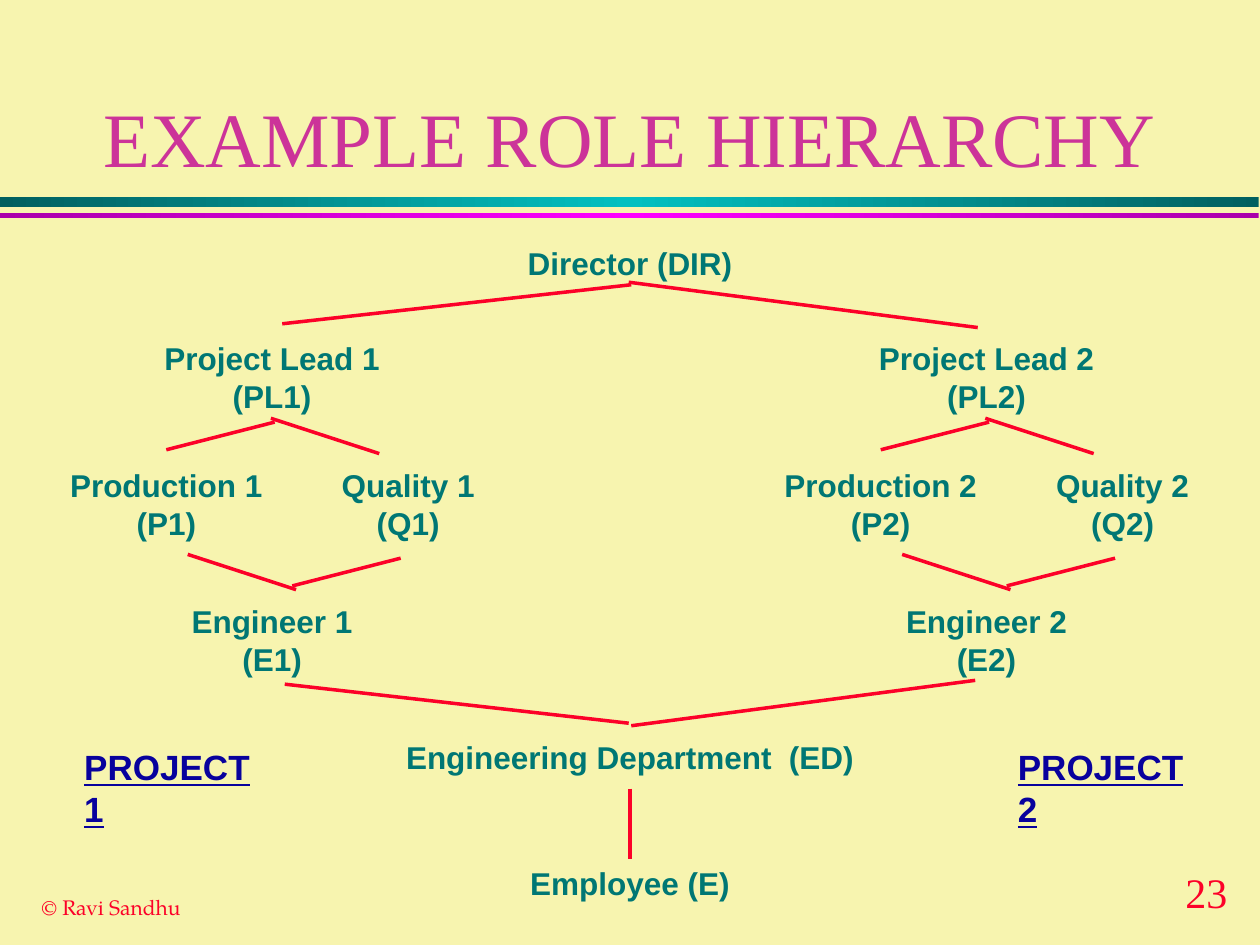
from copy import deepcopy
from pptx import Presentation, util as u
from pptx.dml.color import RGBColor
from pptx.enum import shapes, text
from pptx.oxml.ns import qn
from lxml import etree

RED, TEAL, NAVY = "FC0128", "007774", "08019D"
MID, LEFT = text.PP_ALIGN.CENTER, text.PP_ALIGN.LEFT


def tint(code):
    """Turn a hex string into a colour."""
    return RGBColor.from_string(code)


def write(slide, words, box, size=18, font="Arial", color=TEAL, bold=False,
          line=False, align=LEFT, wrap=False, anchor=text.MSO_ANCHOR.TOP):
    """Place text in a box, one paragraph for each line."""
    frame = slide.shapes.add_textbox(*map(u.Inches, box)).text_frame
    frame.word_wrap = wrap
    frame.vertical_anchor = anchor
    frame.text = words
    for para in frame.paragraphs:
        para.alignment = align
        face = para.runs[0].font
        face.size, face.name = u.Pt(size), font
        face.bold, face.underline = bold, line
        face.color.rgb = tint(color)


def role(slide, words, mid, top, width):
    """Write a role name centred on a point."""
    high = 0.7 if "\n" in words else 0.4
    write(slide, words, (mid - width / 2, top, width, high), bold=True, align=MID)


def link(slide, x1, y1, x2, y2):
    """Draw a red line between two points."""
    wire = slide.shapes.add_connector(
        shapes.MSO_CONNECTOR.STRAIGHT, *map(u.Inches, (x1, y1, x2, y2)))
    wire.line.color.rgb = tint(RED)
    wire.line.width = u.Pt(2)
    etree.SubElement(wire._element.spPr, qn("a:effectLst"))


def band(slide, box, edge, core):
    """Draw a bar that fades from edge to core and back."""
    bar = slide.shapes.add_shape(shapes.MSO_SHAPE.RECTANGLE, *map(u.Inches, box))
    bar.shadow.inherit = False
    bar.line.fill.background()
    bar.fill.gradient()
    bar.fill.gradient_angle = 0
    stops = bar.fill._xPr.find(qn("a:gradFill")).find(qn("a:gsLst"))
    stops.insert(1, deepcopy(stops[0]))
    for stop, spot, code in zip(bar.fill.gradient_stops, (0, 0.5, 1), (edge, core, edge)):
        stop.position = spot
        stop.color.rgb = tint(code)


def header(slide, left, top, width):
    """Place the title and the two bands under it."""
    band(slide, (left, top + 1.56, width, 0.08), "005F5F", "00C0C0")
    band(slide, (left, top + 1.69, width, 0.04), "AA00AA", "FF00FF")
    write(slide, "EXAMPLE ROLE HIERARCHY", (left + 0.43, top + 0.25, width - 0.85, 1.25),
          size=44, font="Times New Roman", color="CC3399", align=MID, wrap=True,
          anchor=text.MSO_ANCHOR.BOTTOM)


def project(slide, left, top, num):
    """Draw the diamond of roles of one project."""
    mid = left + 1.7
    for name, code, x, y, width in (
            ("Project Lead", "PL", mid, 0, 1.96),
            ("Production", "P", left + 0.86, 1.01, 1.78),
            ("Quality", "Q", left + 2.78, 1.01, 1.3),
            ("Engineer", "E", mid, 2.09, 1.53)):
        role(slide, f"{name} {num}\n({code}{num})", x, top + y, width)
    for x, y, rise in ((0.86, 0.93, -0.22), (1.69, 0.68, 0.28),
                       (1.03, 1.76, 0.28), (1.86, 2.01, -0.22)):
        link(slide, left + x, top + y, left + x + 0.86, top + y + rise)


def trunk(slide, mid, top):
    """Draw the shared roles and their links to both projects."""
    for words, y, width in (("Director (DIR)", 0, 1.88),
                            ("Engineering Department  (ED)", 3.92, 3.85),
                            ("Employee (E)", 4.92, 1.84)):
        role(slide, words, mid, top + y, width)
    for x1, y1, x2, y2 in ((0.01, 0.37, -2.76, 0.68), (-0.01, 0.35, 2.76, 0.71),
                           (-2.74, 3.54, -0.01, 3.85), (0.01, 3.87, 2.74, 3.51),
                           (0, 4.37, 0, 4.93)):
        link(slide, mid + x1, top + y1, mid + x2, top + y2)


def footer(slide, left, top):
    """Place the credit and the slide number."""
    write(slide, "© Ravi Sandhu", (left, top + 0.22, 1.35, 0.3),
          size=12, font="TeX Gyre Pagella", color=RED)
    write(slide, "23", (left + 9.08, top, 0.59, 0.5),
          size=24, font="Times New Roman", color=RED)


def main():
    """Build and save the slide."""
    deck = Presentation()
    deck.slide_width, deck.slide_height = u.Inches(10), u.Inches(7.5)
    slide = deck.slides.add_slide(deck.slide_layouts[6])
    slide.background.fill.solid()
    slide.background.fill.fore_color.rgb = tint("F7F4AF")
    header(slide, 0, 0, 9.99)
    footer(slide, 0.23, 6.83)
    trunk(slide, 5, 1.89)
    for num, left, tag in ((1, 0.46, 0.57), (2, 6.13, 7.98)):
        project(slide, left, 2.64, num)
        write(slide, f"PROJECT {num}", (tag, 5.87, 1.7, 0.43),
              size=20, color=NAVY, bold=True, line=True, wrap=True)
    deck.save("out.pptx")


if __name__ == "__main__":
    main()
